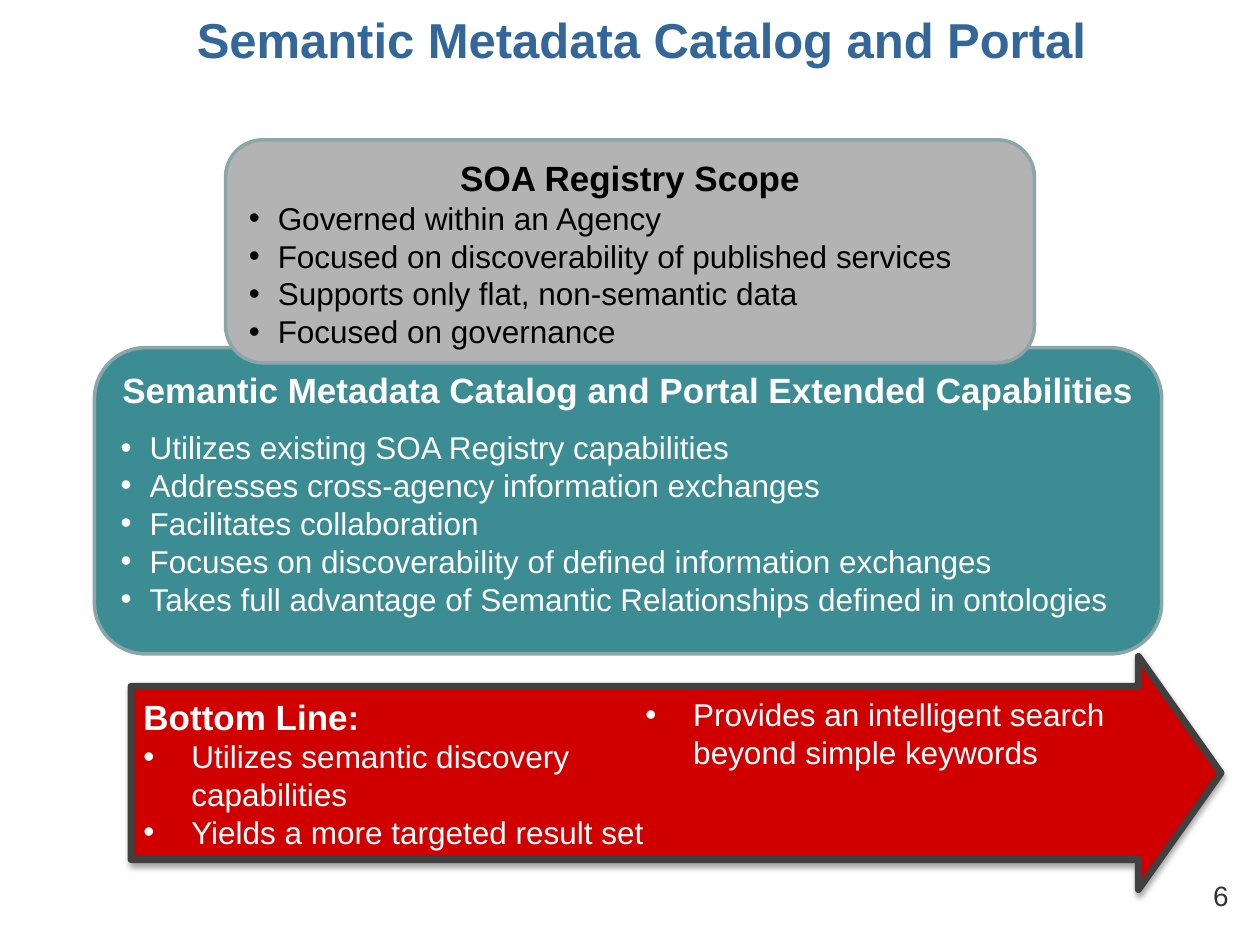
from lxml import etree
from pptx import Presentation
from pptx.dml.color import RGBColor
from pptx.enum.shapes import MSO_SHAPE
from pptx.enum.text import MSO_ANCHOR, PP_ALIGN
from pptx.oxml import parse_xml
from pptx.oxml.ns import nsdecls, qn
from pptx.util import Inches, Pt

ROUNDED, ARROW = MSO_SHAPE.ROUNDED_RECTANGLE, MSO_SHAPE.RIGHT_ARROW
LEFT, CENTER = PP_ALIGN.LEFT, PP_ALIGN.CENTER
TOP, MIDDLE = MSO_ANCHOR.TOP, MSO_ANCHOR.MIDDLE

WHITE = RGBColor(0xFF, 0xFF, 0xFF)
BLACK = RGBColor(0, 0, 0)
BLUE = RGBColor(0x33, 0x66, 0x99)
TEAL = RGBColor(0x3C, 0x8C, 0x93)
GRAY = RGBColor(0xB3, 0xB3, 0xB3)
RED = RGBColor(0xD0, 0, 0)
EDGE = RGBColor(0x8A, 0xA6, 0xA8)
DARK = RGBColor(0x40, 0x40, 0x40)
NUMBER_COLOR = RGBColor(0x33, 0x33, 0x33)

# Content
TITLE = "Semantic Metadata Catalog and Portal"
PAGE_NUMBER = "6"
CATALOG = dict(
    heading="Semantic Metadata Catalog and Portal Extended Capabilities",
    points=[
        "Utilizes existing SOA Registry capabilities",
        "Addresses cross-agency information exchanges",
        "Facilitates collaboration",
        "Focuses on discoverability of defined information exchanges",
        "Takes full advantage of Semantic Relationships defined in ontologies",
    ],
    box=(0.75, 2.76, 8.47, 2.43), fill=TEAL, color=WHITE, gap=10,
)
REGISTRY = dict(
    heading="SOA Registry Scope",
    points=[
        "Governed within an Agency",
        "Focused on discoverability of published services",
        "Supports only flat, non-semantic data",
        "Focused on governance",
    ],
    box=(1.79, 1.11, 6.42, 1.77), fill=GRAY, color=BLACK,
)
BOTTOM_LINE = dict(
    heading="Bottom Line:",
    points=[
        "Utilizes semantic discovery capabilities",
        "Yields a more targeted result set",
        "Provides an intelligent search beyond simple keywords",
    ],
    box=(1.04, 5.21, 8.65, 1.85), fill=RED, color=WHITE, preset=ARROW,
    edge=DARK, edge_width=4, align=LEFT, anchor=MIDDLE, hang=0.38,
)


def write(frame, text, *, size, color, bold=False, align=LEFT, hang=None, after=0):
    """Add a paragraph, bulleted when a hanging indent is given."""
    first = frame.paragraphs[0]
    paragraph = frame.add_paragraph() if first.runs else first
    if hang:
        properties = paragraph._p.get_or_add_pPr()
        properties.set("marL", str(Inches(hang)))
        properties.set("indent", str(-Inches(hang)))
        etree.SubElement(properties, qn("a:buFont")).set("typeface", "Arial")
        etree.SubElement(properties, qn("a:buChar")).set("char", "•")
    paragraph.alignment = align
    if after:
        paragraph.space_after = Pt(after)
    run = paragraph.add_run()
    run.text = text
    font = run.font
    font.name, font.size, font.bold = "Arial", Pt(size), bold
    font.color.rgb = color


def add_label(slide, text, box, wrap=True, **text_format):
    frame = slide.shapes.add_textbox(*map(Inches, box)).text_frame
    frame.word_wrap = wrap
    write(frame, text, **text_format)


def add_panel(slide, heading, points, box, fill, color, preset=ROUNDED, edge=EDGE,
              edge_width=2, align=CENTER, anchor=TOP, hang=0.23, gap=0):
    panel = slide.shapes.add_shape(preset, *map(Inches, box))
    panel.shadow.inherit = False
    panel.fill.solid()
    panel.fill.fore_color.rgb = fill
    panel.line.color.rgb = edge
    panel.line.width = Pt(edge_width)
    frame = panel.text_frame
    frame.word_wrap = True
    frame.vertical_anchor = anchor
    write(frame, heading, size=20, color=color, bold=True, align=align, after=gap)
    for point in points:
        write(frame, point, size=18, color=color, hang=hang)
    return panel


def add_drop_shadow(shape):
    effects = shape._element.spPr.find(qn("a:effectLst"))
    effects.append(parse_xml(
        f'<a:outerShdw {nsdecls("a")} blurRad="{Pt(3.1)}" dist="{Pt(1.8)}" '
        'dir="5400000" rotWithShape="0"><a:srgbClr val="000000">'
        '<a:alpha val="35000"/></a:srgbClr></a:outerShdw>'))


presentation = Presentation()
presentation.slide_width, presentation.slide_height = Inches(10), Inches(7.5)
slide = presentation.slides.add_slide(presentation.slide_layouts[6])

# Page number and title
add_label(slide, PAGE_NUMBER, (9.53, 6.92, 0.47, 0.37), wrap=False,
          size=16, color=NUMBER_COLOR)
add_label(slide, TITLE, (0.18, 0.03, 9.82, 0.57),
          size=28, color=BLUE, bold=True, align=CENTER)

# Stacked panels, the registry overlapping the catalog
catalog = add_panel(slide, **CATALOG)
catalog.text_frame.margin_left = catalog.text_frame.margin_right = Inches(0.09)
add_panel(slide, **REGISTRY)

# Two-column arrow
arrow = add_panel(slide, **BOTTOM_LINE)
arrow.adjustments[0], arrow.adjustments[1] = 0.743, 0.354
arrow.text_frame._txBody.bodyPr.set("numCol", "2")
add_drop_shadow(arrow)

presentation.save("out.pptx")
